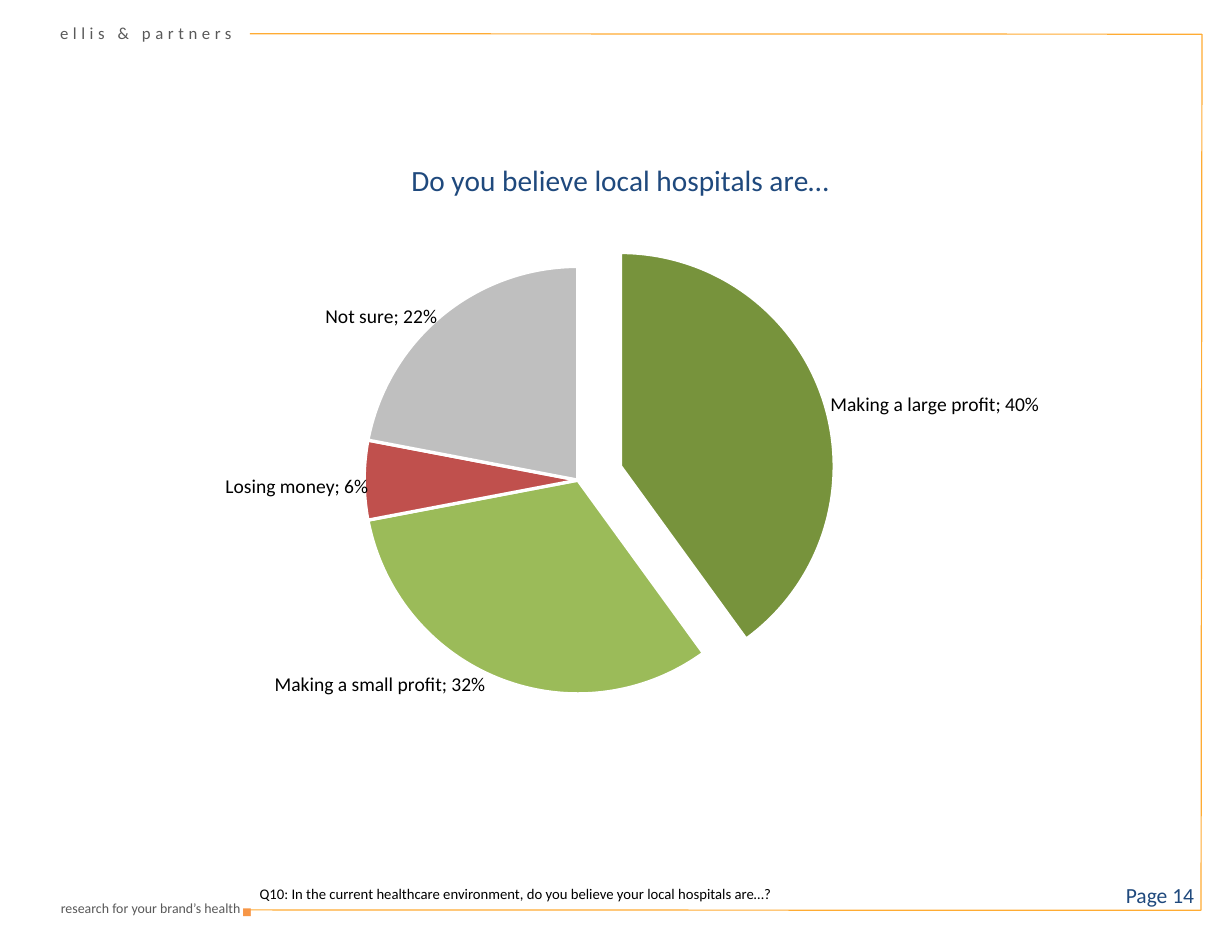
from lxml import etree
from pptx import Presentation
from pptx.chart.data import CategoryChartData
from pptx.dml.color import RGBColor
from pptx.enum import chart as charts, shapes, text
from pptx.oxml import parse_xml
from pptx.oxml.ns import nsdecls, qn
from pptx.util import Cm, Pt

ORANGE_LINE = RGBColor(0xFF, 0xAC, 0x33)
ORANGE = RGBColor(0xF7, 0x96, 0x46)
GREY = RGBColor(0x59, 0x59, 0x59)
NAVY = RGBColor(0x1F, 0x49, 0x7D)
BLACK = RGBColor(0, 0, 0)
WHITE = RGBColor(0xFF, 0xFF, 0xFF)
DARK_GREEN = RGBColor(0x77, 0x93, 0x3C)
GREEN = RGBColor(0x9B, 0xBB, 0x59)
RED = RGBColor(0xC0, 0x50, 0x4D)
SILVER = RGBColor(0xBF, 0xBF, 0xBF)
LEFT, RIGHT = text.PP_ALIGN.LEFT, text.PP_ALIGN.RIGHT


def add_text(slide, wording, box, size, color, align=LEFT, wrap=False, inset=0.23):
    shape = slide.shapes.add_textbox(*map(Cm, box))
    frame = shape.text_frame
    frame.word_wrap = wrap
    if not wrap:
        frame.auto_size = text.MSO_AUTO_SIZE.SHAPE_TO_FIT_TEXT
    frame.margin_left = frame.margin_right = Cm(inset)
    frame.margin_top = frame.margin_bottom = Cm(0.13)
    paragraph = frame.paragraphs[0]
    paragraph.text = wording
    paragraph.alignment = align
    paragraph.font.name = "Calibri"
    paragraph.font.size = Pt(size)
    paragraph.font.color.rgb = color
    return frame


def manual_layout(modes="", **fractions):
    """Layout element in fractions of the chart; without modes, x and y are offsets."""
    parts = modes + "".join(f'<c:{key} val="{value}"/>' for key, value in fractions.items())
    return parse_xml(f'<c:layout {nsdecls("c")}><c:manualLayout>{parts}</c:manualLayout></c:layout>')


presentation = Presentation()
presentation.slide_width, presentation.slide_height = Cm(26.67), Cm(20.32)
slide = presentation.slides.add_slide(presentation.slide_layouts[6])

# Frame, open on the left
corners = [(5.41, 0.73), (26.02, 0.74), (26.0, 19.7), (5.38, 19.69)]
for start, end in zip(corners, corners[1:]):
    edge = slide.shapes.add_connector(
        shapes.MSO_CONNECTOR.STRAIGHT, *map(Cm, start + end))
    edge.line.color.rgb = ORANGE_LINE
    edge.line.width = Pt(0.75)
    etree.SubElement(edge.element.spPr, qn("a:effectLst"))

# Header and footer
add_text(slide, "▪", (5, 19.17, 0.71, 1.04), 18.8, ORANGE)
add_text(slide, "research for your brand’s health", (1.07, 19.34, 4.37, 0.61), 8.5, GREY, RIGHT)
firm = add_text(slide, "ellis & partners", (1.07, 0.36, 4.5, 0.69), 10.3, GREY)
firm.paragraphs[0].runs[0].font._element.set("spc", "280")
page = add_text(slide, "Page 14", (19.91, 18.82, 6.22, 1.09), 13.2, NAVY, RIGHT, True, 0.28)
page.vertical_anchor = text.MSO_ANCHOR.MIDDLE

# Pie chart: answer, share, colour, label offset
answers = [
    ("Making a large profit", 0.40, DARK_GREEN, (0, 0.03)),
    ("Making a small profit", 0.32, GREEN, (-0.01, -0.02)),
    ("Losing money", 0.06, RED, (0.01, 0.01)),
    ("Not sure", 0.22, SILVER, (0, 0.03)),
]
data = CategoryChartData(number_format="0%")
data.categories = [answer[0] for answer in answers]
data.add_series("Series 1", [answer[1] for answer in answers])
chart = slide.shapes.add_chart(
    charts.XL_CHART_TYPE.PIE, Cm(1.35), Cm(2.95), Cm(24), Cm(13.41), data).chart
chart.has_legend = False
chart.font.name = "Calibri"
chart.font.size = Pt(18)
chart.font.color.rgb = BLACK

chart.has_title = True
title = chart.chart_title.text_frame.paragraphs[0]
title.text = "Do you believe local hospitals are…"
title.font.name = "Calibri"
title.font.size = Pt(18)
title.font.bold = False
title.font.color.rgb = NAVY
title_element = chart.chart_title._element
for layout in title_element.findall(qn("c:layout")):
    title_element.remove(layout)
edge_modes = '<c:xMode val="edge"/><c:yMode val="edge"/>'
title_element.find(qn("c:tx")).addnext(manual_layout(edge_modes, x=0.31, y=0.03))

plot = chart.plots[0]
plot.vary_by_categories = True
plot_area = plot._element.getparent()
for layout in plot_area.findall(qn("c:layout")):
    plot_area.remove(layout)
inner_modes = '<c:layoutTarget val="inner"/>' + edge_modes
plot_area.insert(0, manual_layout(inner_modes, x=0.26, y=0.21, w=0.41, h=0.69))

series = plot.series[0]
labels = series.data_labels
labels.show_value = labels.show_category_name = True
labels.show_percentage = False
labels.number_format, labels.number_format_is_linked = "0%", False
labels.position = charts.XL_LABEL_POSITION.OUTSIDE_END
labels.font.name = "Calibri"
labels.font.size = Pt(12)
labels.font.color.rgb = BLACK
for leader in labels._element.findall(qn("c:showLeaderLines")):
    leader.set("val", "0")
separator = parse_xml(f'<c:separator {nsdecls("c")}>; </c:separator>')
labels._element.find(qn("c:showBubbleSize")).addnext(separator)

shown = "".join(
    f'<c:show{part} val="{int(part in ("Val", "CatName"))}"/>'
    for part in ("LegendKey", "Val", "CatName", "SerName", "Percent", "BubbleSize"))
for index, (_, _, color, (dx, dy)) in enumerate(answers):
    point = series.points[index]
    point.format.fill.solid()
    point.format.fill.fore_color.rgb = color
    point.format.line.color.rgb = WHITE
    point.format.line.width = Pt(2)
    label = parse_xml(
        f'<c:dLbl {nsdecls("c")}><c:idx val="{index}"/><c:dLblPos val="outEnd"/>{shown}'
        '<c:separator>; </c:separator></c:dLbl>')
    label.insert(1, manual_layout(x=dx, y=dy))
    labels._element.insert(index, label)
first_slice = series._element.find(qn("c:dPt"))
first_slice.find(qn("c:spPr")).addprevious(
    parse_xml(f'<c:explosion {nsdecls("c")} val="21"/>'))

add_text(
    slide, "Q10: In the current healthcare environment, do you believe your local hospitals are…?",
    (5.34, 19.02, 19.96, 0.66), 9, BLACK, wrap=True, inset=0.28)

presentation.save("out.pptx")
